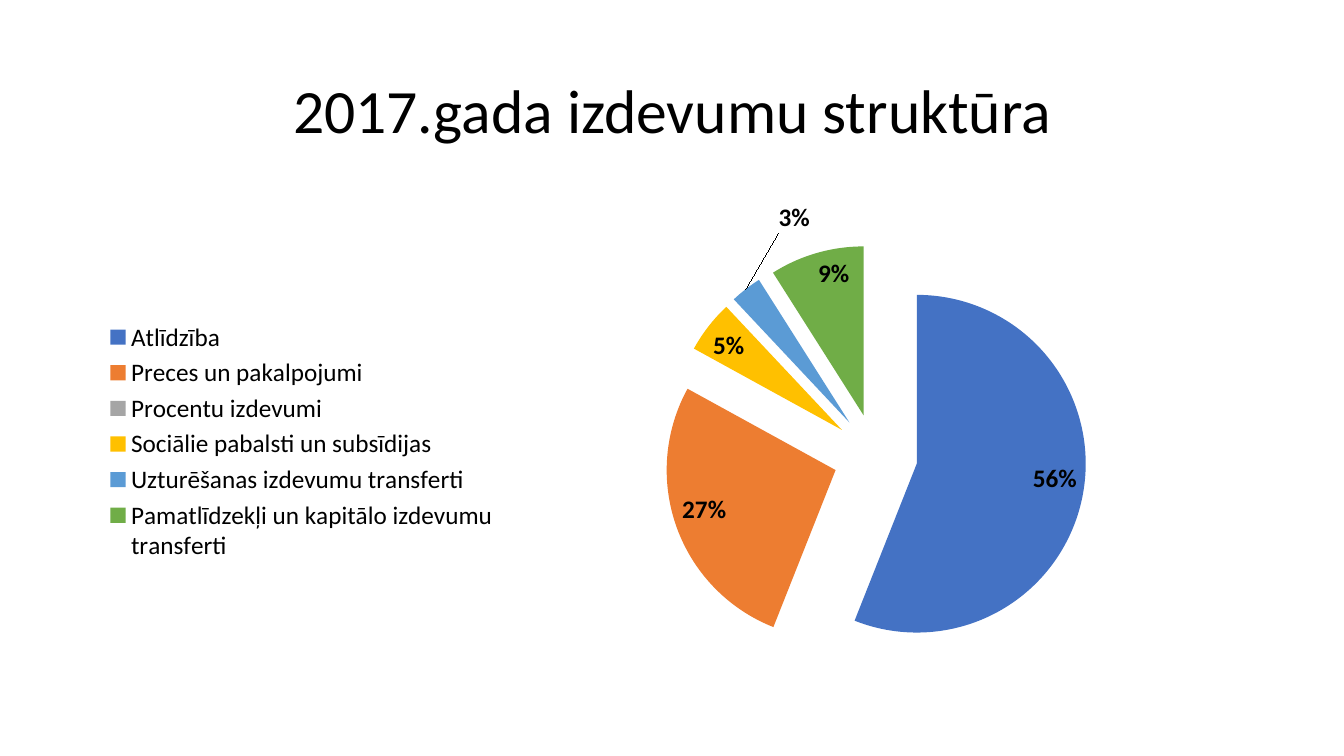
"""Build a slide with an exploded pie of the 2017 expense structure."""
import pptx
import pptx.chart.data
import pptx.dml.color
import pptx.enum.chart
import pptx.enum.text
import pptx.oxml
import pptx.oxml.ns
import pptx.util

TITLE = "2017.gada izdevumu struktūra"
FONT = "Calibri"
COLORS = {"text": "000000", "blue": "4472C4", "orange": "ED7D31", "gray": "A5A5A5",
          "gold": "FFC000", "sky": "5B9BD5", "green": "70AD47"}
PARTS = [
    ("Atlīdzība", 56, "blue"),
    ("Preces un pakalpojumi", 27, "orange"),
    ("Procentu izdevumi", 0, "gray"),
    ("Sociālie pabalsti un subsīdijas", 5, "gold"),
    ("Uzturēšanas izdevumu transferti", 3, "sky"),
    ("Pamatlīdzekļi un kapitālo izdevumu transferti", 9, "green"),
]
BURST = {"all": 25, 2: 52}
MOVES = {2: (0.057, -0.2), 4: (0.025, -0.19)}
PLOT = (0.49, 0.09, 0.37, 0.88)
KEY = (0.01, 0.24, 0.34, 0.52)
WIDE, HIGH = 13.33, 7.5
LEFT, SPAN = 0.92, 11.5
ROWS = {"title": (0.4, 1.45), "chart": (2, 4.76)}


def box(name):
    top, tall = ROWS[name]
    return [pptx.util.Inches(n) for n in (LEFT, top, SPAN, tall)]


def color(name):
    return pptx.dml.color.RGBColor.from_string(COLORS[name])


def style(font, size, bold=False):
    font.name, font.size, font.bold = FONT, pptx.util.Pt(size), bold
    font.color.rgb = color("text")


def node(tag, inner="", **attrs):
    text = "".join(f' {key}="{val}"' for key, val in attrs.items())
    space = pptx.oxml.ns.nsdecls("c")
    return pptx.oxml.parse_xml(f"<c:{tag} {space}{text}>{inner}</c:{tag}>")


def layout(place, fixed=True):
    marks = ""
    if fixed:
        marks = '<c:xMode val="edge"/><c:yMode val="edge"/>'
    marks += "".join(f'<c:{key} val="{val}"/>' for key, val in zip("xywh", place))
    return node("layout", f"<c:manualLayout>{marks}</c:manualLayout>")


def set_plot(chart):
    area = chart.plots[0]._element.getparent()
    for old in area.findall(pptx.oxml.ns.qn("c:layout")):
        area.remove(old)
    area.insert(0, layout(PLOT))


def set_key(chart):
    chart.has_legend = True
    key = chart.legend
    key.position = pptx.enum.chart.XL_LEGEND_POSITION.LEFT
    key.include_in_layout = False
    style(key.font, 18)
    for old in key._element.findall(pptx.oxml.ns.qn("c:layout")):
        key._element.remove(old)
    key._element.find(pptx.oxml.ns.qn("c:legendPos")).addnext(layout(KEY))


def set_tags(series):
    tags = series.data_labels
    tags.show_percentage, tags.show_value = True, False
    tags.number_format, tags.number_format_is_linked = "0%", False
    tags.position = pptx.enum.chart.XL_LABEL_POSITION.INSIDE_END
    style(tags.font, 18, True)
    shows = {"LegendKey": 0, "Val": 0, "CatName": 0, "SerName": 0, "Percent": 1, "BubbleSize": 0}
    flags = "".join(f'<c:show{key} val="{val}"/>' for key, val in shows.items())
    for spot, (idx, move) in enumerate(MOVES.items()):
        tag = node("dLbl", f'<c:idx val="{idx}"/><c:dLblPos val="inEnd"/>{flags}')
        tag.insert(1, layout(move, False))
        tags._element.insert(spot, tag)


def set_parts(series):
    for idx, (_, _, name) in enumerate(PARTS):
        point = series.points[idx]
        point.format.fill.solid()
        point.format.fill.fore_color.rgb = color(name)
    for dot in series._element.findall(pptx.oxml.ns.qn("c:dPt")):
        burst = BURST.get(dot.idx.val, BURST["all"])
        dot.find(pptx.oxml.ns.qn("c:spPr")).addprevious(node("explosion", val=burst))
    first = series._element.find(pptx.oxml.ns.qn("c:dPt"))
    first.addprevious(node("explosion", val=BURST["all"]))


def add_pie(slide):
    data = pptx.chart.data.CategoryChartData()
    data.categories = [part[0] for part in PARTS]
    data.add_series("Series 1", [part[1] for part in PARTS])
    kind = pptx.enum.chart.XL_CHART_TYPE.PIE
    chart = slide.shapes.add_chart(kind, *box("chart"), data).chart
    chart.has_title = False
    style(chart.font, 10)
    chart.plots[0].vary_by_categories = True
    series = chart.plots[0].series[0]
    set_parts(series)
    set_tags(series)
    set_plot(chart)
    set_key(chart)


def add_title(slide):
    title = slide.shapes.title
    title.left, title.top, title.width, title.height = box("title")
    frame = title.text_frame
    frame.text = TITLE
    frame.vertical_anchor = pptx.enum.text.MSO_ANCHOR.MIDDLE
    para = frame.paragraphs[0]
    para.alignment = pptx.enum.text.PP_ALIGN.CENTER
    para.line_spacing = 0.9
    style(para.runs[0].font, 44)


def main():
    deck = pptx.Presentation()
    deck.slide_width = pptx.util.Inches(WIDE)
    deck.slide_height = pptx.util.Inches(HIGH)
    slide = deck.slides.add_slide(deck.slide_layouts[5])
    add_title(slide)
    add_pie(slide)
    deck.save("out.pptx")


if __name__ == "__main__":
    main()
